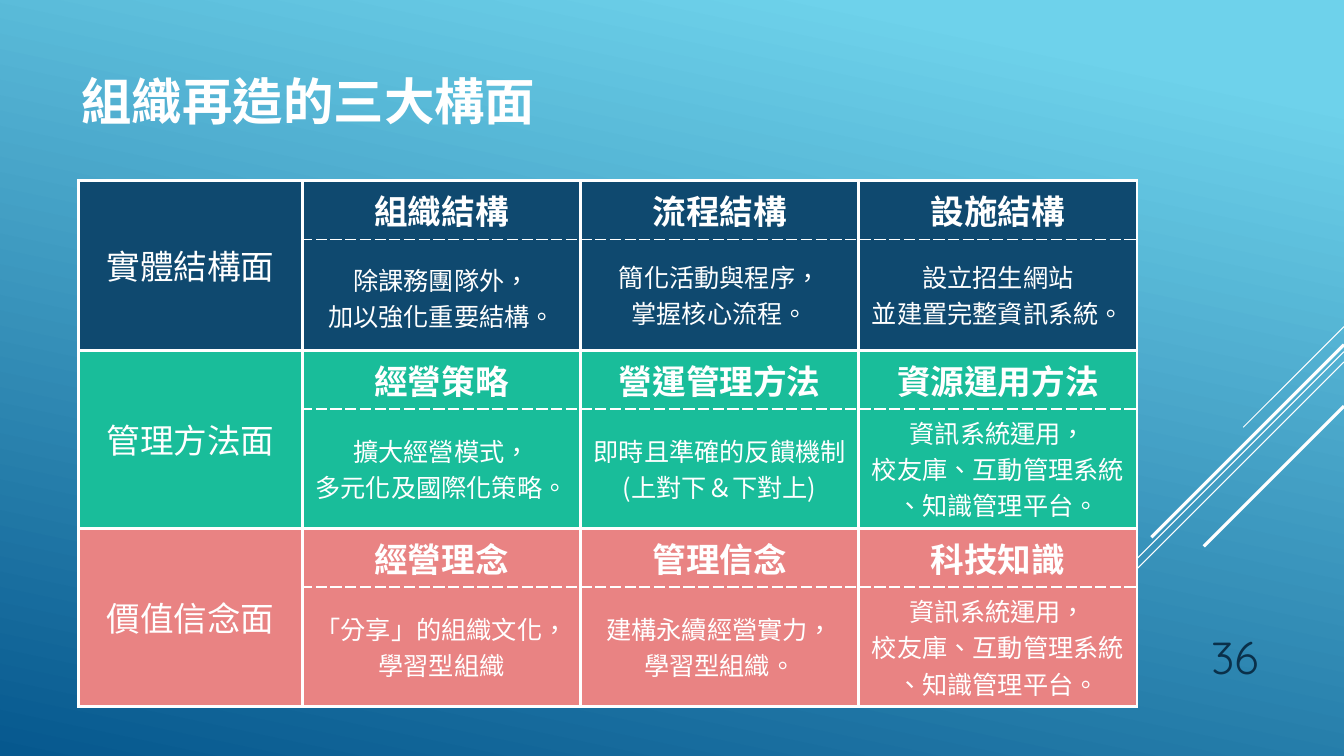
from dataclasses import dataclass
from typing import Any

from lxml.etree import SubElement
from pptx import Presentation
from pptx.dml.color import RGBColor
from pptx.enum.lang import MSO_LANGUAGE_ID
from pptx.enum.shapes import MSO_CONNECTOR
from pptx.enum.text import MSO_ANCHOR, PP_ALIGN
from pptx.oxml import parse_xml
from pptx.oxml.ns import nsdecls, qn
from pptx.util import Inches, Length, Pt


@dataclass(frozen=True)
class Theme:
    white: str = "FFFFFF"
    ink: str = "0A304A"
    sky: str = "6ED2EB"
    deep: str = "06588E"
    navy: str = "0F496F"
    green: str = "19BD9A"
    coral: str = "E98383"
    display: str = "Quicksand"
    label: str = "Arial"
    body: str = "Noto Sans CJK SC"
    title_size: int = 36
    number_size: int = 32
    head_size: int = 24
    detail_size: int = 18
    thin: float = 0.75
    dash: float = 1
    thick: float = 2.25


@dataclass(frozen=True)
class TextStyle:
    font: str
    size: float
    color: str
    bold: bool = False
    align: PP_ALIGN = PP_ALIGN.CENTER


@dataclass(frozen=True)
class Topic:
    head: str
    detail: tuple[str, ...]
    first_leading: float = 26


@dataclass(frozen=True)
class Aspect:
    name: str
    color: str
    detail_height: float
    topics: tuple[Topic, ...]


@dataclass(frozen=True)
class Ray:
    """A 45-degree line falling leftwards from the right edge."""
    start: float
    run: float
    weight: float


THEME = Theme()
WIDTH, HEIGHT = Inches(13.33), Inches(7.5)
LEADING = 26

# Positions and sizes are percentages of the slide's width or height
TITLE_AREA = (5.33, 2.27, 70, 22)
NUMBER_AREA = (85, 81.33, 9.38, 9.73)
TABLE_LEFT, TABLE_TOP = 5.85, 23.87
NAME_WIDTH, TOPIC_WIDTH, HEAD_HEIGHT = 16.65, 20.7, 7.78

TITLE = TextStyle(THEME.display, THEME.title_size, THEME.white, True, PP_ALIGN.LEFT)
NUMBER = TextStyle(THEME.display, THEME.number_size, THEME.ink, align=PP_ALIGN.RIGHT)
NAME = TextStyle(THEME.label, THEME.head_size, THEME.white)
HEAD = TextStyle(THEME.label, THEME.head_size, THEME.white, True)
DETAIL = TextStyle(THEME.body, THEME.detail_size, THEME.white)

RAYS = (
    Ray(43.2, 7.5, THEME.thin),
    Ray(46.53, 24.45, THEME.thin),
    Ray(47.87, 15.53, THEME.thin),
    Ray(45.6, 14.33, THEME.thick),
    Ray(53.73, 10.43, THEME.thick),
)

PLATFORMS = ("資訊系統運用，", "校友庫、互動管理系統", "、知識管理平台。")
ASPECTS = (
    Aspect("實體結構面", THEME.navy, 14.67, (
        Topic("組織結構", ("除課務團隊外，", "加以強化重要結構。"), first_leading=30),
        Topic("流程結構", ("簡化活動與程序，", "掌握核心流程。")),
        Topic("設施結構", ("設立招生網站", "並建置完整資訊系統。")),
    )),
    Aspect("管理方法面", THEME.green, 15.78, (
        Topic("經營策略", ("擴大經營模式，", "多元化及國際化策略。")),
        Topic("營運管理方法", ("即時且準確的反饋機制(上對下＆下對上)",)),
        Topic("資源運用方法", PLATFORMS),
    )),
    Aspect("價值信念面", THEME.coral, 15.78, (
        Topic("經營理念", ("「分享」的組織文化，學習型組織",)),
        Topic("管理信念", ("建構永續經營實力，", "學習型組織。")),
        Topic("科技知識", PLATFORMS),
    )),
)


def across(share: float) -> Length:
    return Length(round(WIDTH * share / 100))


def down(share: float) -> Length:
    return Length(round(HEIGHT * share / 100))


def apply_format(target: Any, values: dict[str, Any]) -> None:
    for name, value in values.items():
        setattr(target, name, value)


def write(frame: Any, lines: tuple[str, ...], style: TextStyle,
          leadings: tuple[float, ...] = ()) -> None:
    for index, line in enumerate(lines):
        para = frame.paragraphs[0] if index == 0 else frame.add_paragraph()
        para.alignment = style.align
        if leadings:
            para.line_spacing = Pt(leadings[index])
        span = para.add_run()
        span.text = line
        apply_format(span.font, {
            "name": style.font, "size": Pt(style.size), "bold": style.bold,
            "language_id": MSO_LANGUAGE_ID.TRADITIONAL_CHINESE,
        })
        span.font.color.rgb = RGBColor.from_string(style.color)
        SubElement(span.font._element, qn("a:ea"), typeface=THEME.body)


def add_text(page: Any, area: tuple[float, ...], text: str, style: TextStyle,
             anchor: MSO_ANCHOR) -> None:
    left, top, width, height = area
    box = page.shapes.add_textbox(across(left), down(top), across(width), down(height))
    apply_format(box.text_frame, {"word_wrap": True, "vertical_anchor": anchor})
    write(box.text_frame, (text,), style)


def add_ray(page: Any, ray: Ray) -> None:
    run = across(ray.run)
    line = page.shapes.add_connector(
        MSO_CONNECTOR.STRAIGHT, WIDTH, down(ray.start), WIDTH - run, down(ray.start) + run)
    line.line.color.rgb = RGBColor.from_string(THEME.white)
    line.line.width = Pt(ray.weight)
    SubElement(line._element.spPr, qn("a:effectLst"))


def format_cell(cell: Any, color: str, dashed_side: str = "") -> None:
    cell.vertical_anchor = MSO_ANCHOR.MIDDLE
    cell.fill.solid()
    cell.fill.fore_color.rgb = RGBColor.from_string(color)
    properties = cell._tc.get_or_add_tcPr()
    for index, side in enumerate("LRTB"):
        dashed = side == dashed_side
        weight = Pt(THEME.dash if dashed else THEME.thick)
        properties.insert(index, parse_xml(
            f'<a:ln{side} {nsdecls("a")} w="{weight}"><a:solidFill>'
            f'<a:srgbClr val="{THEME.white}"/></a:solidFill>'
            f'<a:prstDash val="{"dash" if dashed else "solid"}"/></a:ln{side}>'))


def add_aspects(page: Any) -> None:
    widths = [NAME_WIDTH] + [TOPIC_WIDTH] * 3
    heights = [h for aspect in ASPECTS for h in (HEAD_HEIGHT, aspect.detail_height)]
    table = page.shapes.add_table(
        len(heights), len(widths), across(TABLE_LEFT), down(TABLE_TOP),
        across(sum(widths)), down(sum(heights))).table
    apply_format(table, {"first_row": False, "horz_banding": False})
    for column, width in zip(table.columns, widths):
        column.width = across(width)
    for row, height in zip(table.rows, heights):
        row.height = down(height)

    for index, aspect in enumerate(ASPECTS):
        upper, lower = 2 * index, 2 * index + 1
        # Aspect name spanning both rows
        name = table.cell(upper, 0)
        name.merge(table.cell(lower, 0))
        for row in (upper, lower):
            format_cell(table.cell(row, 0), aspect.color)
        write(name.text_frame, (aspect.name,), NAME)
        # Topic heads above their details, parted by a dashed rule
        for column, topic in enumerate(aspect.topics, start=1):
            head, detail = table.cell(upper, column), table.cell(lower, column)
            format_cell(head, aspect.color, "B")
            format_cell(detail, aspect.color, "T")
            write(head.text_frame, (topic.head,), HEAD)
            leadings = (topic.first_leading,) + (LEADING,) * (len(topic.detail) - 1)
            write(detail.text_frame, topic.detail, DETAIL, leadings)


def main() -> None:
    deck = Presentation()
    apply_format(deck, {"slide_width": WIDTH, "slide_height": HEIGHT})
    page = deck.slides.add_slide(deck.slide_layouts[6])

    # Background gradient
    fill = page.background.fill
    fill.gradient()
    fill.gradient_angle = 258
    for stop, position, color in zip(fill.gradient_stops, (0.1, 1), (THEME.sky, THEME.deep)):
        stop.position = position
        stop.color.rgb = RGBColor.from_string(color)

    # Decorative rays, page number, title and table
    for ray in RAYS:
        add_ray(page, ray)
    add_text(page, NUMBER_AREA, "36", NUMBER, MSO_ANCHOR.BOTTOM)
    add_text(page, TITLE_AREA, "組織再造的三大構面", TITLE, MSO_ANCHOR.MIDDLE)
    add_aspects(page)
    deck.save("out.pptx")


if __name__ == "__main__":
    main()
